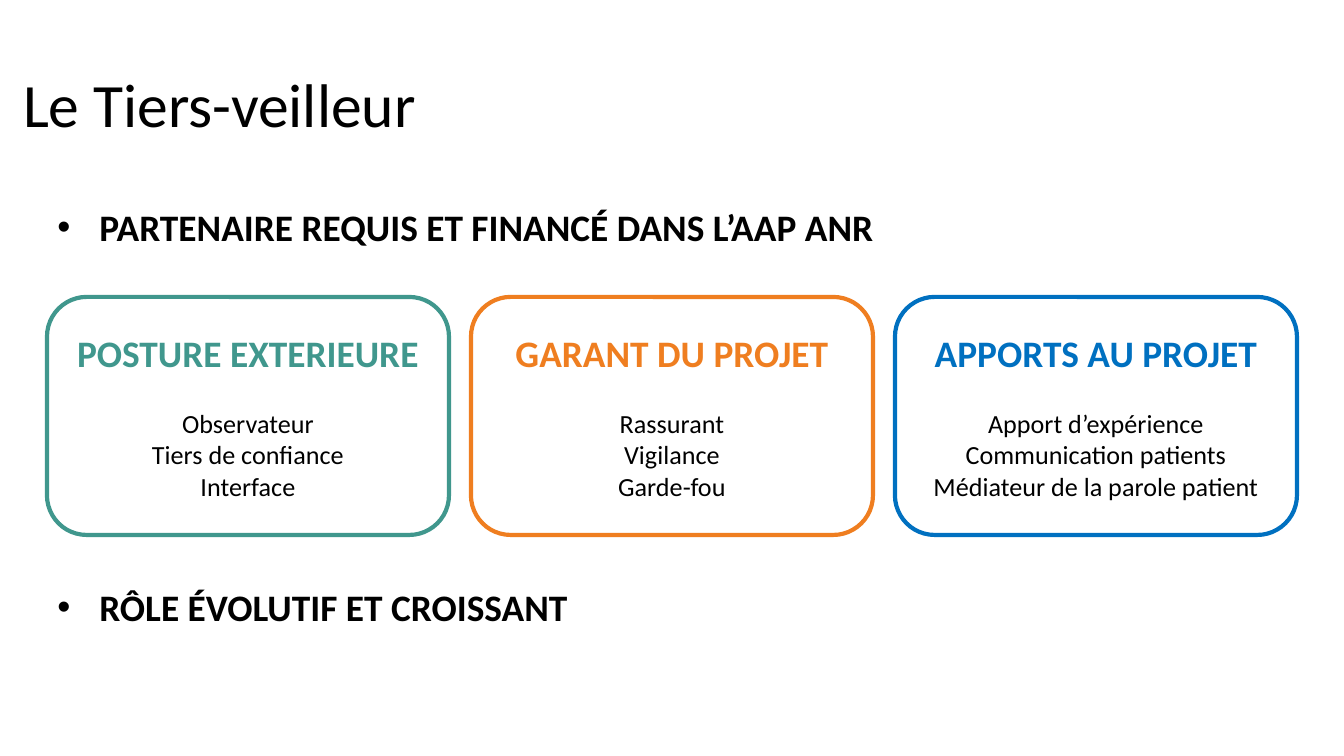
from lxml.etree import SubElement
from pptx import Presentation
from pptx.dml.color import RGBColor
from pptx.enum.shapes import MSO_SHAPE as Shape
from pptx.enum.text import MSO_ANCHOR as Anchor, PP_ALIGN as Align
from pptx.oxml.ns import qn
from pptx.util import Inches, Pt

SLIDE_WIDTH, SLIDE_HEIGHT = 1344, 756
PX = Inches(10) / SLIDE_WIDTH
FONT = "Calibri"
BLACK = "000000"
INDENT = 42
CARD_LEFT, CARD_TOP, CARD_WIDTH, CARD_HEIGHT = 47, 297, 402, 238
CARD_PITCH = 424

CARDS = [
    ("POSTURE EXTERIEURE", "40978D",
     ["Observateur", "Tiers de confiance", "Interface"]),
    ("GARANT DU PROJET", "EF7E20",
     ["Rassurant", "Vigilance", "Garde-fou"]),
    ("APPORTS AU PROJET", "0070C0",
     ["Apport d’expérience", "Communication patients",
      "Médiateur de la parole patient"]),
]
KEY_POINTS = [
    (197, "PARTENAIRE REQUIS ET FINANCÉ DANS L’AAP ANR"),
    (577, "RÔLE ÉVOLUTIF ET CROISSANT"),
]


def px(*lengths):
    return [round(length * PX) for length in lengths]


def rgb(color):
    return RGBColor.from_string(color)


def add_run(paragraph, text, size, color=BLACK, bold=False):
    run = paragraph.add_run()
    run.text = text
    run.font.name = FONT
    run.font.size = Pt(size)
    run.font.bold = bold
    run.font.color.rgb = rgb(color)


def add_text_frame(slide, left, top, width, height):
    frame = slide.shapes.add_textbox(*px(left, top, width, height)).text_frame
    frame.word_wrap = True
    frame.vertical_anchor = Anchor.MIDDLE
    return frame


def add_title(slide, text):
    frame = add_text_frame(slide, 23, 65, 1298, 90)
    frame.margin_left = frame.margin_right = 0
    frame.margin_top = frame.margin_bottom = 0
    heading = frame.paragraphs[0]
    heading.line_spacing = 0.8
    add_run(heading, text, 33)


def add_key_point(slide, top, text):
    point = add_text_frame(slide, 44, top, 1267, 59).paragraphs[0]
    properties = point._p.get_or_add_pPr()
    for name, length in zip(("marL", "indent"), px(INDENT, -INDENT)):
        properties.set(name, str(length))
    SubElement(properties, qn("a:buFont")).set("typeface", "Arial")
    SubElement(properties, qn("a:buChar")).set("char", "•")
    add_run(point, text, 20, bold=True)


def add_card(slide, left, heading, color, qualities):
    card = slide.shapes.add_shape(
        Shape.ROUNDED_RECTANGLE, *px(left, CARD_TOP, CARD_WIDTH, CARD_HEIGHT))
    card.shadow.inherit = False
    card.fill.background()
    card.line.color.rgb = rgb(color)
    card.line.width = Pt(2.25)
    frame = card.text_frame
    frame.word_wrap = True
    frame.vertical_anchor = Anchor.MIDDLE
    title = frame.paragraphs[0]
    title.alignment = Align.CENTER
    add_run(title, heading, 20, color, bold=True)
    for position, quality in enumerate(qualities):
        line = frame.add_paragraph()
        line.alignment = Align.CENTER
        if position == 0:
            line.space_before = Pt(17)
        add_run(line, quality, 14)


def main():
    deck = Presentation()
    deck.slide_width, deck.slide_height = px(SLIDE_WIDTH, SLIDE_HEIGHT)
    slide = deck.slides.add_slide(deck.slide_layouts[6])
    for column, (heading, color, qualities) in enumerate(CARDS):
        add_card(slide, CARD_LEFT + column * CARD_PITCH, heading, color, qualities)
    add_title(slide, "Le Tiers-veilleur")
    for top, text in KEY_POINTS:
        add_key_point(slide, top, text)
    deck.save("out.pptx")


if __name__ == "__main__":
    main()
